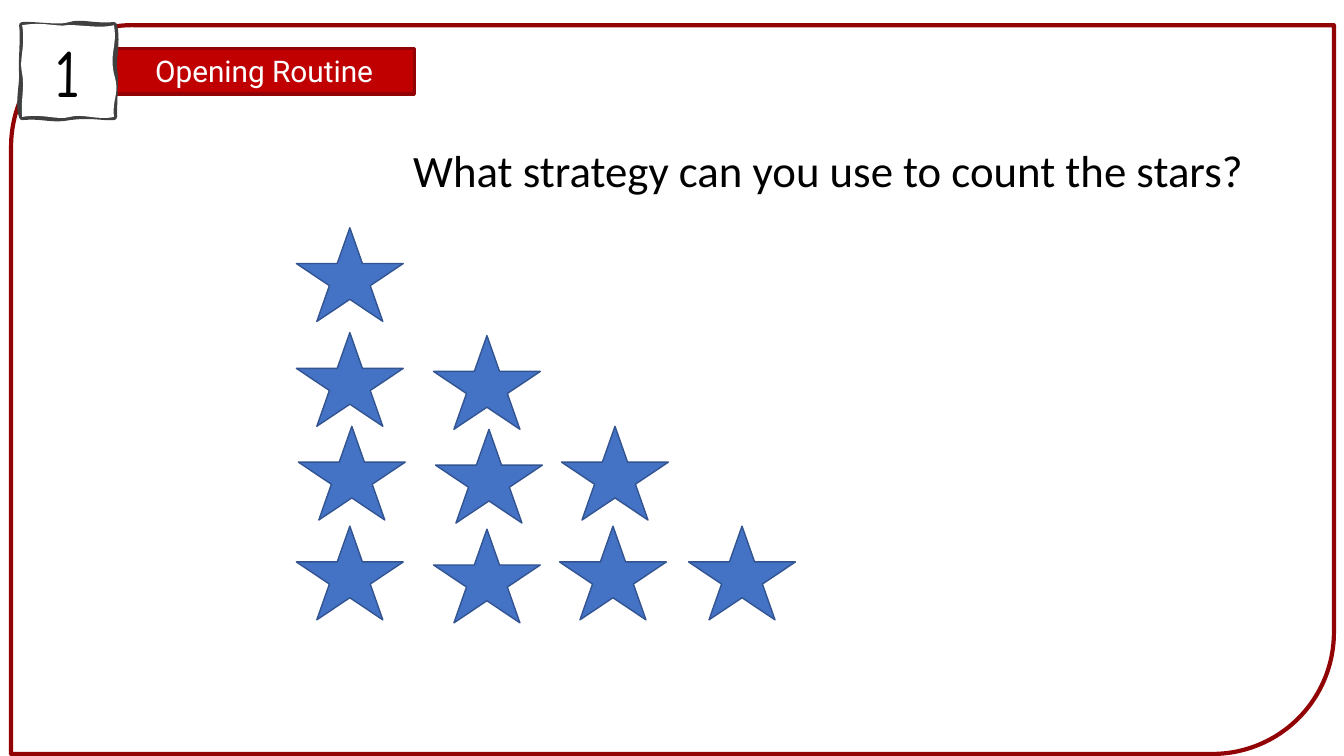
from lxml import etree
from pptx import Presentation
from pptx.dml.color import RGBColor
from pptx.enum.shapes import MSO_SHAPE
from pptx.enum.text import MSO_ANCHOR, MSO_AUTO_SIZE, PP_ALIGN
from pptx.oxml.ns import qn
from pptx.util import Inches, Pt

RECT = MSO_SHAPE.RECTANGLE
FRAME = MSO_SHAPE.ROUND_2_DIAG_RECTANGLE
STAR = MSO_SHAPE.STAR_5_POINT
TOP, MIDDLE = MSO_ANCHOR.TOP, MSO_ANCHOR.MIDDLE
CENTER, LEFT = PP_ALIGN.CENTER, PP_ALIGN.LEFT
GROW = MSO_AUTO_SIZE.SHAPE_TO_FIT_TEXT

WHITE = RGBColor(0xFF, 0xFF, 0xFF)
BLACK = RGBColor(0x00, 0x00, 0x00)
RED = RGBColor(0xC0, 0x00, 0x00)
DARK_RED = RGBColor(0x92, 0x03, 0x05)
CHARCOAL = RGBColor(0x40, 0x40, 0x40)
BLUE = RGBColor(0x44, 0x72, 0xC4)
DARK_BLUE = RGBColor(0x32, 0x54, 0x91)

# Wavy badge curves (control, control, end) in percent of the badge
BADGE_EDGE = [
    ((15, -1), (41, 4), (52, 0)), ((64, -4), (78, 2), (100, 0)),
    ((104, 16), (99, 37), (100, 47)), ((102, 57), (100, 77), (100, 100)),
    ((89, 101), (75, 97), (52, 100)), ((30, 104), (25, 98), (0, 100)),
    ((-5, 87), (1, 63), (0, 52)), ((-1, 41), (2, 11), (0, 0)),
]
BADGE_FACE = [
    ((23, -4), (38, 2), (49, 0)), ((60, -1), (85, 4), (100, 0)),
    ((104, 23), (95, 29), (100, 53)), ((107, 76), (98, 78), (100, 100)),
    ((82, 104), (66, 96), (52, 100)), ((38, 104), (23, 96), (0, 100)),
    ((-2, 84), (3, 68), (0, 53)), ((-4, 37), (4, 24), (0, 0)),
]


def style(sp, fill, line, width):
    sp.shadow.inherit = False
    if fill is None:
        sp.fill.background()
    else:
        sp.fill.solid()
        sp.fill.fore_color.rgb = fill
    sp.line.color.rgb = line
    sp.line.width = Pt(width)


def add_preset(shapes, kind, box, fill, line, width):
    sp = shapes.add_shape(kind, *map(Inches, box))
    style(sp, fill, line, width)
    return sp


def write(sp, text, font, size, color, align, anchor=MIDDLE):
    tf = sp.text_frame
    tf.vertical_anchor = anchor
    tf.auto_size = GROW
    p = tf.paragraphs[0]
    p.alignment = align
    r = p.add_run()
    r.text = text
    r.font.name = font
    r.font.size = Pt(size)
    r.font.color.rgb = color


def add_curves(outlines, segments, **paint):
    outline = etree.SubElement(outlines, qn("a:path"), w="100", h="100", **paint)

    def add_step(tag, points):
        step = etree.SubElement(outline, qn(tag))
        for px, py in points:
            etree.SubElement(step, qn("a:pt"), x=str(px), y=str(py))

    add_step("a:moveTo", [(0, 0)])
    for points in segments:
        add_step("a:cubicBezTo", points)
    add_step("a:close", [])


def add_badge(slide, box):
    x, y, w, h = map(Inches, box)
    builder = slide.shapes.build_freeform(x, y)
    builder.add_line_segments([(x + w, y), (x + w, y + h), (x, y + h)], close=True)
    sp = builder.convert_to_shape()
    # Bend the square: one outline takes the line, the other the fill
    outlines = next(sp.element.iter(qn("a:pathLst")))
    for outline in list(outlines):
        outlines.remove(outline)
    add_curves(outlines, BADGE_EDGE, fill="none")
    add_curves(outlines, BADGE_FACE, stroke="0")
    style(sp, WHITE, CHARCOAL, 4.5)
    write(sp, "1", "Comic Neue", 48, BLACK, CENTER)


def add_header(slide, box):
    x, y, w, h = box
    # Red title bar, starting at the badge's right side
    bar = add_preset(slide.shapes, RECT, (x + h, y + h / 4, w - h, h / 2),
                     RED, DARK_RED, 2.25)
    write(bar, "Opening Routine", "Roboto", 21.3, WHITE, CENTER)
    # Hand-drawn number badge
    add_badge(slide, (x, y, h, h))


def add_stars(slide, box):
    x, y, w, h = box
    star_w, star_h = 1.06, 0.93
    columns = [0, 1.36, 2.61, w - star_w]
    rows = [0, 1.04, 1.97, h - star_h]
    group = slide.shapes.add_group_shape()
    # Row n holds n stars; the third row and second column sit slightly off
    for i, top in enumerate(rows):
        for j, left in enumerate(columns[:i + 1]):
            dx = 0.02 if i == 2 else 0
            dy = 0.03 if j == 1 else 0
            add_preset(group.shapes, STAR,
                       (x + left + dx, y + top + dy, star_w, star_h),
                       BLUE, DARK_BLUE, 1)


def add_question(slide, box):
    sp = slide.shapes.add_textbox(*map(Inches, box))
    sp.text_frame.word_wrap = False
    write(sp, "What strategy can you use to count the stars?",
          "Calibri", 32, BLACK, LEFT, TOP)


def main():
    prs = Presentation()
    prs.slide_width, prs.slide_height = Inches(13.33), Inches(7.5)
    slide = prs.slides.add_slide(prs.slide_layouts[6])

    add_preset(slide.shapes, FRAME, (0.11, 0.25, 13.12, 7.23), None, DARK_RED, 3)
    add_header(slide, (0.22, 0.25, 3.89, 0.91))
    add_stars(slide, (2.94, 2.26, 4.95, 3.89))
    add_question(slide, (4, 1.37, 8.52, 0.64))

    prs.save("out.pptx")


if __name__ == "__main__":
    main()
